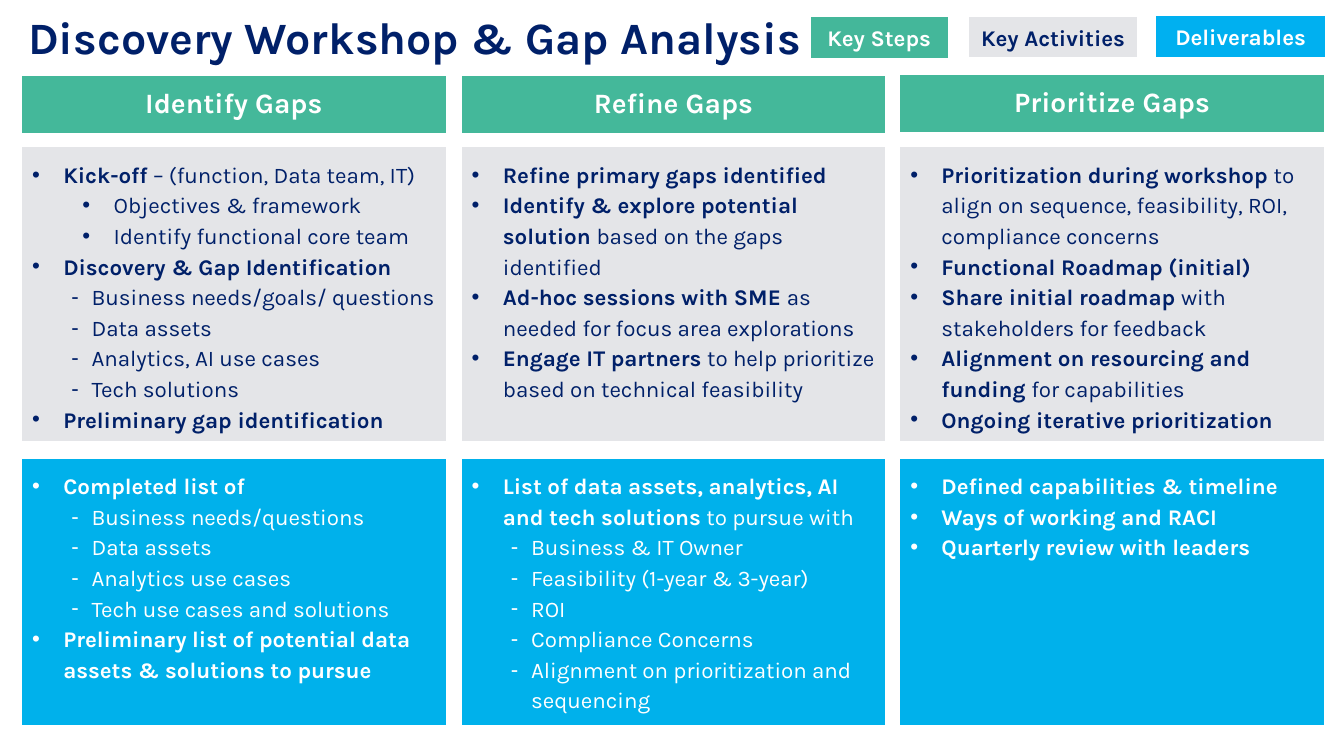
from lxml import etree
from pptx import Presentation
from pptx.dml.color import RGBColor
from pptx.enum.shapes import MSO_SHAPE
from pptx.enum.text import MSO_ANCHOR, PP_ALIGN
from pptx.oxml.ns import qn
from pptx.util import Emu, Pt

PX = 9144  # EMU per px, 100 px to the inch
PROCESS = MSO_SHAPE.FLOWCHART_PROCESS
TOP, MIDDLE = MSO_ANCHOR.TOP, MSO_ANCHOR.MIDDLE
LEFT, CENTER = PP_ALIGN.LEFT, PP_ALIGN.CENTER

FONT = "Karla"
NAVY = RGBColor(0x00, 0x20, 0x69)
WHITE = RGBColor(0xFF, 0xFF, 0xFF)
GREEN = RGBColor(0x44, 0xB8, 0x9A)
LEGEND_GREEN = RGBColor(0x44, 0xB7, 0x9A)
GRAY = RGBColor(0xE4, 0xE5, 0xE8)
BLUE = RGBColor(0x00, 0xB1, 0xEB)
LEGEND_BLUE = RGBColor(0x00, 0xB0, 0xF0)

# Bullet styles: outline level, left margin, hanging indent, character
POINT = (0, 31, 31, "•")
SUBPOINT = (1, 81, 31, "•")
DASH = (1, 59, 20, "-")

COLUMN_WIDTH = 420
# Column left, header top, heading
STEPS = [
    (22, 75, "Identify Gaps"),
    (458, 75, "Refine Gaps"),
    (893, 74, "Prioritize Gaps"),
]

# Each item: bullet style, bold part, regular part
ACTIVITIES = [
    [
        (POINT, "Kick-off", " – (function, Data team, IT)"),
        (SUBPOINT, "", "Objectives & framework"),
        (SUBPOINT, "", "Identify functional core team"),
        (POINT, "Discovery & Gap Identification", ""),
        (DASH, "", "Business needs/goals/ questions"),
        (DASH, "", "Data assets"),
        (DASH, "", "Analytics, AI use cases"),
        (DASH, "", "Tech solutions"),
        (POINT, "Preliminary gap identification", ""),
    ],
    [
        (POINT, "Refine primary gaps identified", ""),
        (POINT, "Identify & explore potential solution ", "based on the gaps identified"),
        (POINT, "Ad-hoc sessions with SME ", "as needed for focus area explorations"),
        (POINT, "Engage IT partners ", "to help prioritize based on technical feasibility"),
    ],
    [
        (POINT, "Prioritization during workshop ",
         "to align on sequence, feasibility, ROI, compliance concerns"),
        (POINT, "Functional Roadmap (initial)", ""),
        (POINT, "Share initial roadmap ", "with stakeholders for feedback"),
        (POINT, "Alignment on resourcing and funding ", "for capabilities"),
        (POINT, "Ongoing iterative prioritization", ""),
    ],
]
DELIVERABLES = [
    [
        (POINT, "Completed list of", ""),
        (DASH, "", "Business needs/questions"),
        (DASH, "", "Data assets"),
        (DASH, "", "Analytics use cases"),
        (DASH, "", "Tech use cases and solutions"),
        (POINT, "Preliminary list of potential data assets & solutions to pursue", ""),
    ],
    [
        (POINT, "List of data assets, analytics, AI and tech solutions", " to pursue with"),
        (DASH, "", "Business & IT Owner"),
        (DASH, "", "Feasibility (1-year & 3-year)"),
        (DASH, "", "ROI"),
        (DASH, "", "Compliance Concerns"),
        (DASH, "", "Alignment on prioritization and sequencing"),
    ],
    [
        (POINT, "Defined capabilities & timeline", ""),
        (POINT, "Ways of working and RACI", ""),
        (POINT, "Quarterly review with leaders", ""),
    ],
]

# Left, top, width, height, label, fill, text colour
LEGEND = [
    (961, 17, 167, 40, "Key Activities", GRAY, NAVY),
    (804, 17, 136, 41, "Key Steps", LEGEND_GREEN, WHITE),
    (1147, 16, 167, 41, "Deliverables", LEGEND_BLUE, WHITE),
]


def px(*lengths):
    return [Emu(length * PX) for length in lengths]


def write(paragraph, text, size=16, color=NAVY, bold=False, align=LEFT):
    paragraph.alignment = align
    run = paragraph.add_run()
    run.text = text
    run.font.name = FONT
    run.font.size = Pt(size)
    run.font.bold = bold
    run.font.color.rgb = color


def set_frame(frame, inset_x, inset_y, anchor):
    frame.word_wrap = True
    frame.vertical_anchor = anchor
    frame.margin_left = frame.margin_right = Emu(inset_x * PX)
    frame.margin_top = frame.margin_bottom = Emu(inset_y * PX)


def add_box(slide, bounds, fill, anchor=TOP):
    box = slide.shapes.add_shape(PROCESS, *px(*bounds))
    box.shadow.inherit = False
    box.fill.solid()
    box.fill.fore_color.rgb = fill
    box.line.fill.background()
    set_frame(box.text_frame, 10, 10, anchor)
    return box.text_frame


def add_label(slide, bounds, fill, text, anchor=TOP, **text_format):
    frame = add_box(slide, bounds, fill, anchor)
    write(frame.paragraphs[0], text, bold=True, align=CENTER, **text_format)


def set_bullet(paragraph, style):
    level, margin, hanging, character = style
    paragraph.level = level
    properties = paragraph._p.get_or_add_pPr()
    properties.set("marL", str(margin * PX))
    properties.set("indent", str(-hanging * PX))
    etree.SubElement(properties, qn("a:buFont")).set("typeface", "Arial")
    etree.SubElement(properties, qn("a:buChar")).set("char", character)


def add_list(slide, bounds, fill, items, color):
    frame = add_box(slide, bounds, fill)
    for index, (style, bold_part, regular_part) in enumerate(items):
        paragraph = frame.add_paragraph() if index else frame.paragraphs[0]
        paragraph.line_spacing = 1.14
        set_bullet(paragraph, style)
        for text, bold in ((bold_part, True), (regular_part, False)):
            if text:
                write(paragraph, text, color=color, bold=bold)


def add_title(slide, text):
    title = slide.shapes.title
    title.left, title.top, title.width, title.height = px(18, 13, 1275, 63)
    set_frame(title.text_frame, 10, 5, TOP)
    heading = title.text_frame.paragraphs[0]
    heading.line_spacing = 0.85
    write(heading, text, size=32, bold=True)


def main():
    deck = Presentation()
    deck.slide_width, deck.slide_height = px(1333, 750)
    slide = deck.slides.add_slide(deck.slide_layouts[5])

    add_title(slide, "Discovery Workshop & Gap Analysis")

    # Columns: step, activities, deliverables
    for (left, top, step), activities, deliverables in zip(STEPS, ACTIVITIES, DELIVERABLES):
        add_label(slide, (left, top, COLUMN_WIDTH, 57), GREEN, step, size=20, color=WHITE)
        add_list(slide, (left, 146, COLUMN_WIDTH, 292), GRAY, activities, NAVY)
        add_list(slide, (left, 455, COLUMN_WIDTH, 264), BLUE, deliverables, WHITE)

    # Legend
    for *bounds, label, fill, color in LEGEND:
        add_label(slide, bounds, fill, label, anchor=MIDDLE, color=color)

    deck.save("out.pptx")


if __name__ == "__main__":
    main()
